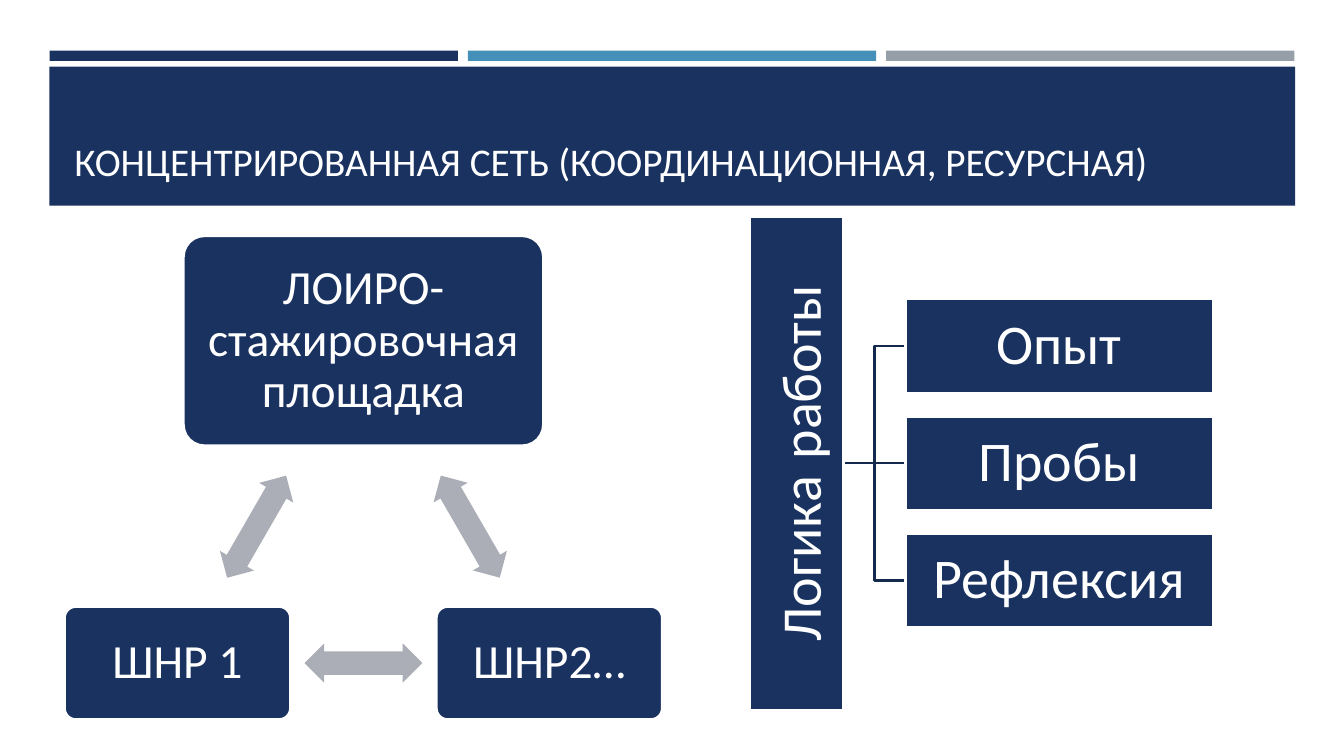
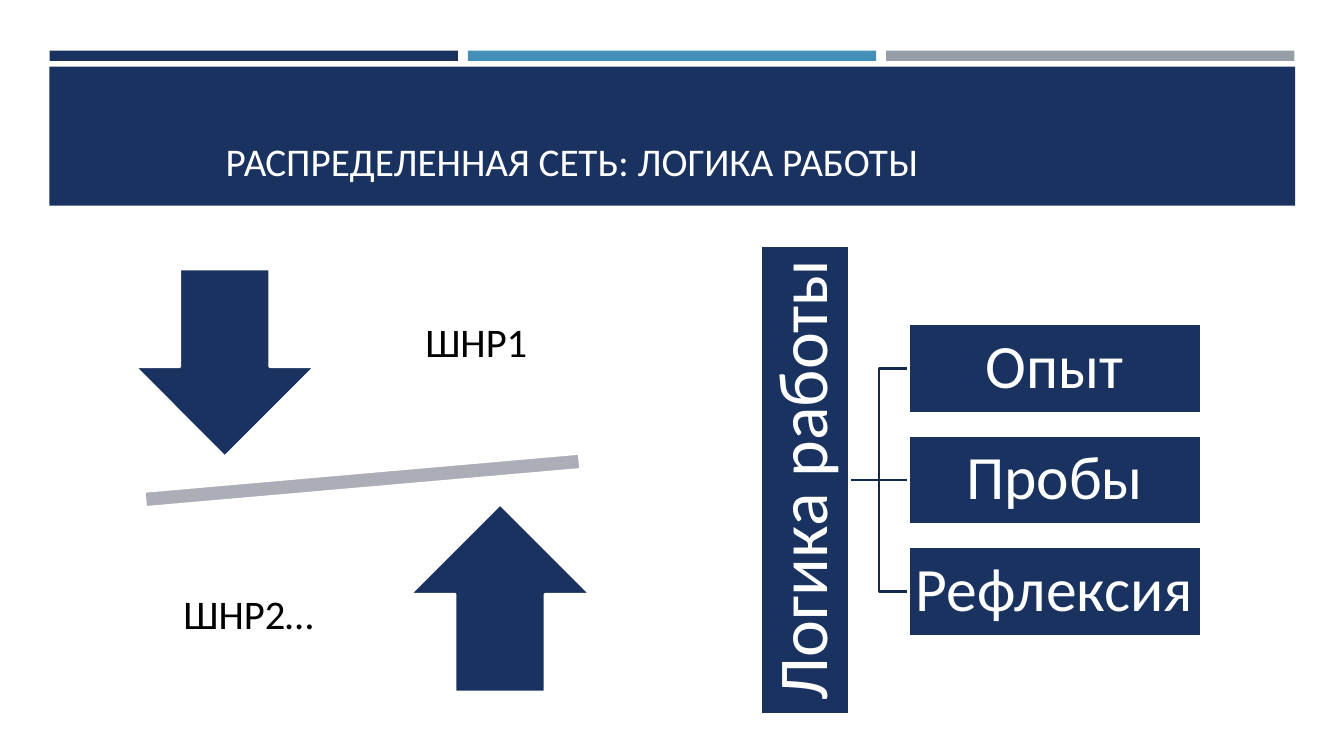
from pptx import Presentation
from pptx.dml.color import RGBColor
from pptx.enum.shapes import MSO_CONNECTOR, MSO_SHAPE
from pptx.enum.text import MSO_ANCHOR, MSO_AUTO_SIZE, PP_ALIGN
from pptx.oxml import parse_xml
from pptx.oxml.ns import nsdecls
from pptx.util import Pt

RECTANGLE = MSO_SHAPE.RECTANGLE
ROUNDED = MSO_SHAPE.ROUNDED_RECTANGLE
DOUBLE_ARROW = MSO_SHAPE.LEFT_RIGHT_ARROW
DOWN_ARROW = MSO_SHAPE.DOWN_ARROW
UP_ARROW = MSO_SHAPE.UP_ARROW
MINUS = MSO_SHAPE.MATH_MINUS
STRAIGHT = MSO_CONNECTOR.STRAIGHT
MIDDLE = MSO_ANCHOR.MIDDLE
BOTTOM = MSO_ANCHOR.BOTTOM
CENTER = PP_ALIGN.CENTER
LEFT = PP_ALIGN.LEFT
NO_AUTOFIT = MSO_AUTO_SIZE.NONE

COLORS = {
    "navy": "1A3260",
    "blue": "4590B8",
    "gray": "969FA7",
    "silver": "ACAEB7",
    "wire": "15284D",
    "white": "FFFFFF",
    "black": "000000",
}
FONT = "Calibri"
LINE_WIDTH = 1.75
TITLE_ONLY = 5


def color(name):
    return RGBColor.from_string(COLORS[name])


class Slides:
    """Holds the deck, its style and the page being drawn. Lengths are points."""

    def __init__(self):
        self.deck = Presentation()
        self.deck.slide_width = Pt(960)
        self.deck.slide_height = Pt(540)
        self.page = None

    def new_page(self, title, indent=0):
        self.page = self.deck.slides.add_slide(self.deck.slide_layouts[TITLE_ONLY])
        for index, fill in enumerate(("navy", "blue", "gray")):
            self.shape(RECTANGLE, 181.2 + index * 298.8, 39.8, 291.6, 7.4, fill, None)
        banner = self.shape(RECTANGLE, 480.2, 97.2, 889.9, 99.4, "navy", None)

        box = self.page.shapes.title
        box.left, box.top, box.width, box.height = Pt(46), Pt(57.6), Pt(868.4), Pt(77.8)
        banner.element.addnext(box.element)
        self.set_text(box, [(title, 28)], "white", 3.6, LEFT, BOTTOM)
        box.text_frame.margin_left = Pt(7.2 + indent)

    def set_text(self, box, spans, font_color, inset, align=CENTER, anchor=MIDDLE):
        """Fills a box with one paragraph made of (text, size) spans."""
        frame = box.text_frame
        frame.word_wrap = True
        frame.auto_size = NO_AUTOFIT
        frame.vertical_anchor = anchor
        frame.margin_left = frame.margin_right = Pt(inset)
        frame.margin_top = frame.margin_bottom = Pt(inset)
        para = frame.paragraphs[0]
        para.alignment = align
        para.line_spacing = 0.9
        for text, size in spans:
            span = para.add_run()
            span.text = text
            span.font.name = FONT
            span.font.size = Pt(size)
            span.font.color.rgb = color(font_color)

    def shape(self, kind, center_x, center_y, width, height, fill="navy",
              line="white", rotation=0, adjustments=()):
        shape = self.page.shapes.add_shape(
            kind, Pt(center_x - width / 2), Pt(center_y - height / 2),
            Pt(width), Pt(height))
        shape.shadow.inherit = False
        shape.rotation = rotation
        for index, value in enumerate(adjustments):
            shape.adjustments[index] = value
        shape.fill.solid()
        shape.fill.fore_color.rgb = color(fill)
        if line:
            self.stroke(shape, line)
        else:
            shape.line.fill.background()
        return shape

    def stroke(self, shape, line):
        shape.line.color.rgb = color(line)
        shape.line.width = Pt(LINE_WIDTH)

    def label(self, text, center_x, center_y, width, height):
        box = self.page.shapes.add_textbox(
            Pt(center_x - width / 2), Pt(center_y - height / 2),
            Pt(width), Pt(height))
        self.set_text(box, [(text, 29)], "black", 16)

    def card(self, text, center_x, center_y, width, height):
        card = self.shape(ROUNDED, center_x, center_y, width, height,
                          adjustments=(0.1,))
        self.set_text(card, [(text, 34)], "white", 10)

    def wire(self, start_x, end_x, y):
        wire = self.page.shapes.add_connector(
            STRAIGHT, Pt(start_x), Pt(y), Pt(end_x), Pt(y))
        self.stroke(wire, "wire")
        wire.element.spPr.append(parse_xml(f"<a:effectLst {nsdecls('a')}/>"))

    def bracket(self, left, right, top, bottom):
        corners = [(left, top), (left, bottom), (right, bottom)]
        builder = self.page.shapes.build_freeform(Pt(right), Pt(top))
        builder.add_line_segments([(Pt(x), Pt(y)) for x, y in corners], close=False)
        bracket = builder.convert_to_shape()
        bracket.shadow.inherit = False
        bracket.fill.background()
        self.stroke(bracket, "wire")

    def logic_tree(self, spine_right, center_y, unit, spine_spans, item_size):
        """Draws a vertical heading and three steps, all scaled by the step height."""
        item_width, gap, pitch = 3.28 * unit, 0.656 * unit, 1.25 * unit
        item_left = spine_right + gap
        self.bracket(spine_right + gap / 2, item_left,
                     center_y - pitch, center_y + pitch)
        self.wire(spine_right, item_left, center_y)
        spine = self.shape(RECTANGLE, spine_right - unit / 2, center_y,
                           5.26 * unit, unit, rotation=270)
        self.set_text(spine, spine_spans, "white", 2)
        for row, text in enumerate(("Опыт", "Пробы", "Рефлексия"), start=-1):
            item = self.shape(RECTANGLE, item_left + item_width / 2,
                              center_y + row * pitch, item_width, unit)
            self.set_text(item, [(text, item_size)], "white", 2)


def concentrated_network(slides):
    slides.new_page("КОНЦЕНТРИРОВАННАЯ СЕТЬ (КООРДИНАЦИОННАЯ, РЕСУРСНАЯ)")
    axis = 259.6
    slides.card("ЛОИРО-стажировочная площадка", axis, 243.4, 257, 149.8)
    for side, text in ((-1, "ШНР 1"), (1, "ШНР2…")):
        slides.card(text, axis + side * 132.8, 473.6, 161.3, 80.6)
    for offset, center_y, rotation in ((76.3, 376.2, 60), (0, 473.6, 180),
                                       (-76.3, 376.2, 300)):
        slides.shape(DOUBLE_ARROW, axis + offset, center_y, 84.2, 28.1,
                     "silver", None, rotation, (0.6, 0.5))
    slides.logic_tree(602.7, 330.9, 67,
                      [("Логика", 40), (" ", 53), ("работы", 40)], 40)


def distributed_network(slides):
    slides.new_page("РАСПРЕДЕЛЕННАЯ СЕТЬ: ЛОГИКА РАБОТЫ", indent=108)
    pivot_x, pivot_y = 258.9, 343.2
    slides.shape(MINUS, pivot_x, pivot_y, 424.1, 48.2, "silver", rotation=355)
    for side, arrow, text in ((-1, DOWN_ARROW, "ШНР1"), (1, UP_ARROW, "ШНР2…")):
        slides.shape(arrow, pivot_x + side * 98.3, pivot_y + side * 84,
                     128.2, 133.9)
        slides.label(text, pivot_x - side * 81.4, pivot_y + side * 97.2,
                     136.8, 141.1)
    slides.logic_tree(607, 342.8, 63.7, [("Логика работы", 50)], 44)


def main():
    slides = Slides()
    concentrated_network(slides)
    distributed_network(slides)
    slides.deck.save("out.pptx")


if __name__ == "__main__":
    main()
